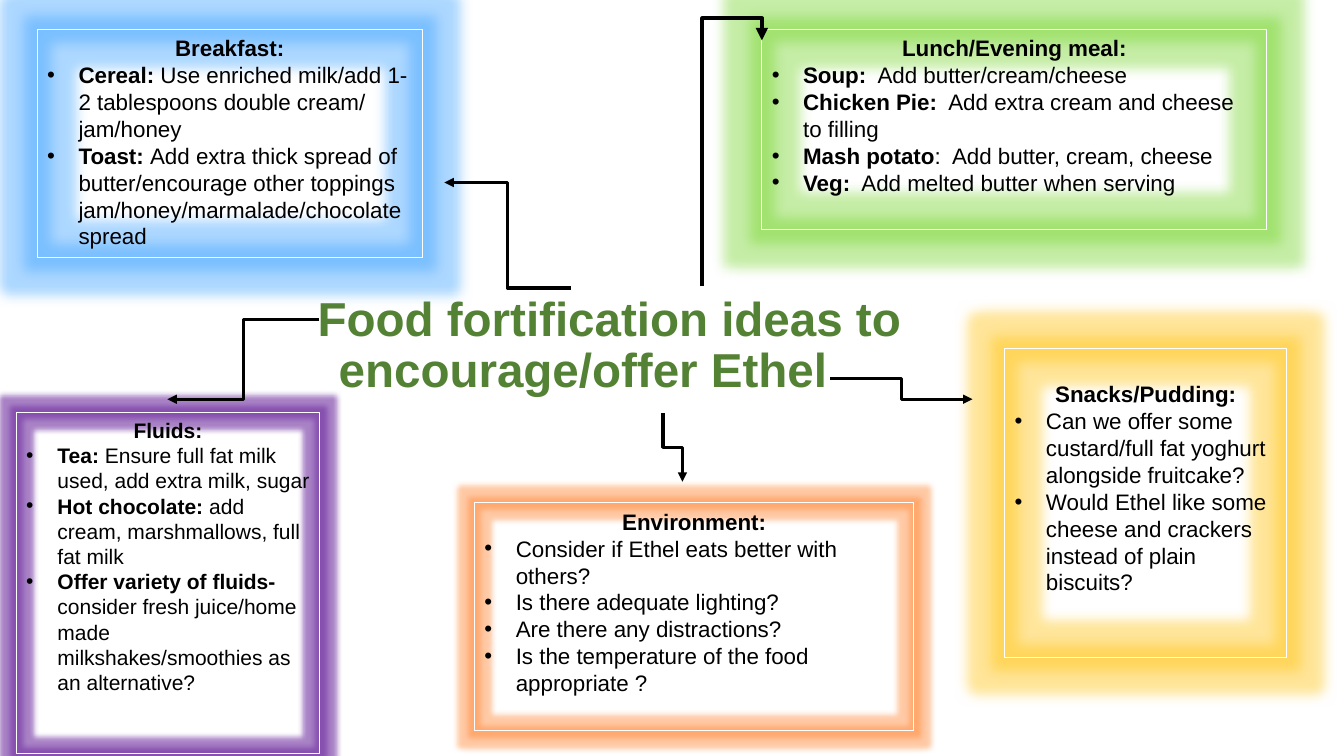
from lxml import etree
from pptx import Presentation
from pptx.dml.color import RGBColor
from pptx.enum.shapes import MSO_CONNECTOR, MSO_SHAPE
from pptx.enum.text import MSO_ANCHOR, PP_ALIGN
from pptx.oxml.ns import qn
from pptx.util import Cm, Pt

RECTANGLE = MSO_SHAPE.RECTANGLE
ELBOW = MSO_CONNECTOR.ELBOW
CENTER, LEFT = PP_ALIGN.CENTER, PP_ALIGN.LEFT
TOP, MIDDLE = MSO_ANCHOR.TOP, MSO_ANCHOR.MIDDLE

WHITE = RGBColor(0xFF, 0xFF, 0xFF)
BLACK = RGBColor(0x00, 0x00, 0x00)
TITLE_GREEN = RGBColor(0x54, 0x82, 0x35)
BLUE = RGBColor(0x31, 0x9D, 0xFF)
PURPLE = RGBColor(0x70, 0x30, 0xA0)
LIME = RGBColor(0x6F, 0xD3, 0x21)
ORANGE = RGBColor(0xFF, 0x7A, 0x1F)
YELLOW = RGBColor(0xFF, 0xC0, 0x00)

FONT = "Arial"
BULLET_INDENT = Cm(0.79)
WIDE_GLOW, NARROW_GLOW = Pt(18), Pt(8)

TITLE = "Food fortification ideas to encourage/offer Ethel"
TITLE_BOX = (5.59, 8, 18.21, 1.47)

CARDS = [
    dict(box=(0.94, 0.74, 9.7, 5.74), heading="Breakfast:", glow=(BLUE, WIDE_GLOW, 40), ideas=[
        ("Cereal: ", "Use enriched milk/add 1-2 tablespoons double cream/ jam/honey"),
        ("Toast: ", "Add extra thick spread of butter/encourage other toppings "
                    "jam/honey/marmalade/chocolate spread")]),
    dict(box=(0.41, 10.39, 7.65, 8.59), heading="Fluids:", glow=(PURPLE, NARROW_GLOW, 60), size=15, ideas=[
        ("Tea: ", "Ensure full fat milk used, add extra milk, sugar"),
        ("Hot chocolate: ", "add cream, marshmallows, full fat milk"),
        ("Offer variety of fluids- ",
         "consider fresh juice/home made milkshakes/smoothies as an alternative?")]),
    dict(box=(19.2, 0.74, 12.73, 5.05), heading="Lunch/Evening meal:", glow=(LIME, WIDE_GLOW, 40), ideas=[
        ("Soup: ", " Add butter/cream/cheese"),
        ("Chicken Pie: ", " Add extra cream and cheese to filling"),
        ("Mash potato", ":  Add butter, cream, cheese"),
        ("Veg: ", " Add melted butter when serving")]),
    dict(box=(11.96, 12.67, 11.07, 5.74), heading="Environment:", glow=(ORANGE, NARROW_GLOW, 40), ideas=[
        ("", "Consider if Ethel eats better with others?"),
        ("", "Is there adequate lighting?"),
        ("", "Are there any distractions?"),
        ("", "Is the temperature of the food appropriate ?")]),
    dict(box=(25.32, 8.79, 7.11, 7.77), heading="Snacks/Pudding:", glow=(YELLOW, WIDE_GLOW, 40),
         top_inset=0.8, ideas=[
             ("", "Can we offer some custard/full fat yoghurt alongside fruitcake?"),
             ("", "Would Ethel like some cheese and crackers instead of plain biscuits?")]),
]

ARROWS = [
    dict(start=(14.38, 7.26), end=(11.2, 4.6)),
    dict(start=(17.7, 7.2), end=(19.2, 1.02), vertical=True, width=3, bend=1.09),
    dict(start=(16.71, 10.41), end=(17.2, 12.14), vertical=True),
    dict(start=(8.05, 8.05), end=(4.22, 10.06)),
    dict(start=(20.93, 9.53), end=(24.51, 10.06)),
]


def add_glow(shape, color, radius, opacity):
    """Surround a shape with a soft coloured glow."""
    shape.shadow.inherit = False
    effects = shape._element.spPr.find(qn("a:effectLst"))
    glow = etree.SubElement(effects, qn("a:glow"), rad=str(int(radius)))
    tint = etree.SubElement(glow, qn("a:srgbClr"), val=str(color))
    etree.SubElement(tint, qn("a:alpha"), val=str(opacity * 1000))


def add_bullet(paragraph):
    """Give a paragraph a hanging round bullet."""
    properties = paragraph._p.get_or_add_pPr()
    properties.set("marL", str(int(BULLET_INDENT)))
    properties.set("indent", str(-int(BULLET_INDENT)))
    etree.SubElement(properties, qn("a:buFont"), typeface=FONT)
    etree.SubElement(properties, qn("a:buChar"), char="•")


def add_run(paragraph, wording, size, color, bold):
    """Append formatted wording to a paragraph."""
    run = paragraph.add_run()
    run.text = wording
    run.font.name, run.font.size, run.font.bold = FONT, Pt(size), bold
    run.font.color.rgb = color


def add_card(slide, box, heading, ideas, glow, size=16, top_inset=0.13):
    """Draw a glowing box with a centred heading and bulleted ideas."""
    card = slide.shapes.add_shape(RECTANGLE, *map(Cm, box))
    card.fill.background()
    card.line.color.rgb = WHITE
    card.line.width = Pt(0.75)
    add_glow(card, *glow)
    frame = card.text_frame
    frame.word_wrap = True
    frame.vertical_anchor = TOP
    frame.margin_top = Cm(top_inset)
    frame.paragraphs[0].alignment = CENTER
    add_run(frame.paragraphs[0], heading, size, BLACK, True)
    for lead, advice in ideas:
        idea = frame.add_paragraph()
        idea.alignment = LEFT
        add_bullet(idea)
        if lead:
            add_run(idea, lead, size, BLACK, True)
        add_run(idea, advice, size, BLACK, False)


def add_title(slide, box):
    """Place the central title with its first line set in."""
    frame = slide.shapes.add_textbox(*map(Cm, box)).text_frame
    frame.word_wrap = True
    frame.vertical_anchor = MIDDLE
    title = frame.paragraphs[0]
    title.alignment = CENTER
    title.line_spacing = 0.9
    title._p.get_or_add_pPr().set("indent", str(int(Cm(1.33))))
    add_run(title, TITLE, 34, TITLE_GREEN, True)


def add_arrow(slide, start, end, vertical=False, width=2.25, bend=0.5):
    """Draw an elbow arrow; a vertical one is a horizontal one turned a quarter."""
    turn = 0
    if vertical:
        upward = start[1] > end[1]
        turn, sign = (90, 1) if upward else (270, -1)
        middle_x, middle_y = (start[0] + end[0]) / 2, (start[1] + end[1]) / 2
        across = sign * (start[1] - middle_y)
        down = sign * (middle_x - start[0])
        start = (middle_x + across, middle_y + down)
        end = (middle_x - across, middle_y - down)
    arrow = slide.shapes.add_connector(ELBOW, *map(Cm, start + end))
    arrow.line.color.rgb = BLACK
    arrow.line.width = Pt(width)
    properties = arrow._element.spPr
    if turn:
        properties.find(qn("a:xfrm")).set("rot", str(turn * 60000))
    guides = properties.find(qn("a:prstGeom")).get_or_add_avLst()
    etree.SubElement(guides, qn("a:gd"), name="adj1", fmla=f"val {round(bend * 100000)}")
    etree.SubElement(properties.find(qn("a:ln")), qn("a:tailEnd"), type="triangle")
    etree.SubElement(properties, qn("a:effectLst"))


def main():
    """Build the food fortification slide."""
    deck = Presentation()
    deck.slide_width, deck.slide_height = Cm(33.87), Cm(19.05)
    slide = deck.slides.add_slide(deck.slide_layouts[6])
    add_title(slide, TITLE_BOX)
    for card in CARDS:
        add_card(slide, **card)
    for arrow in ARROWS:
        add_arrow(slide, **arrow)
    deck.save("out.pptx")


if __name__ == "__main__":
    main()
